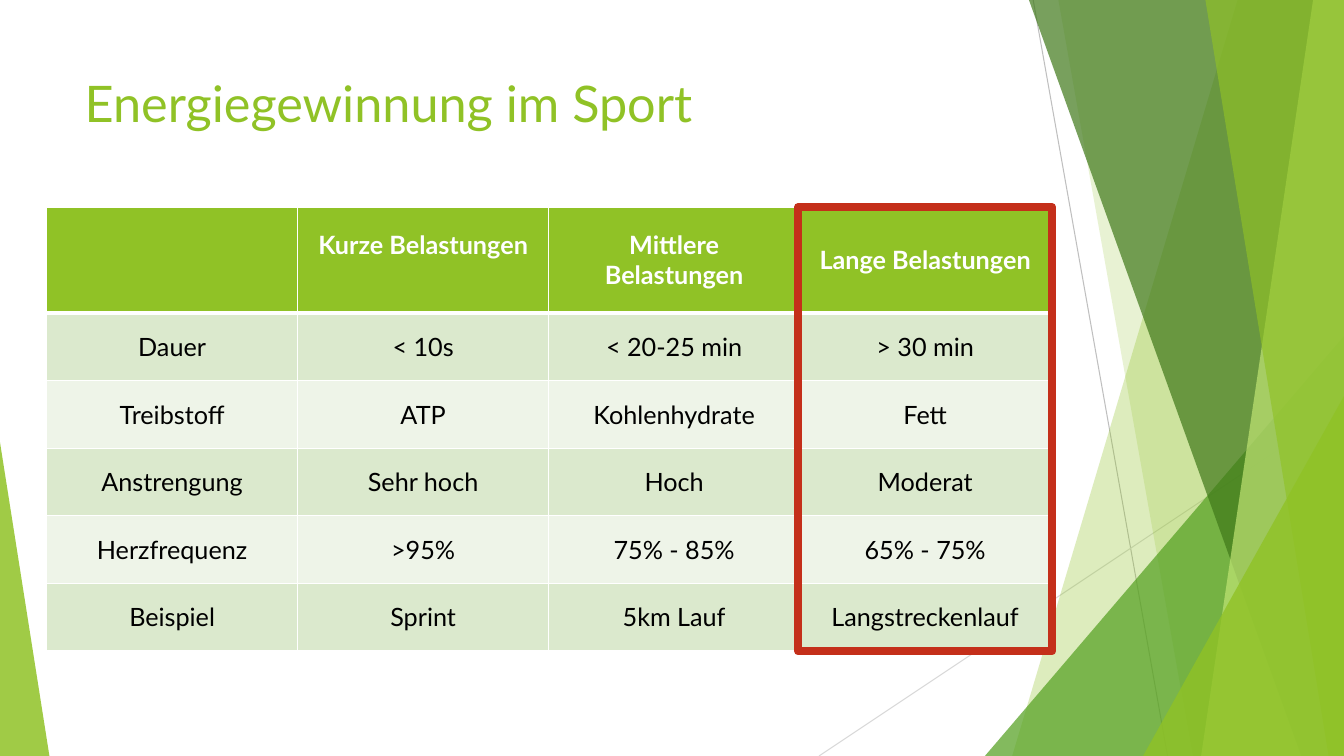
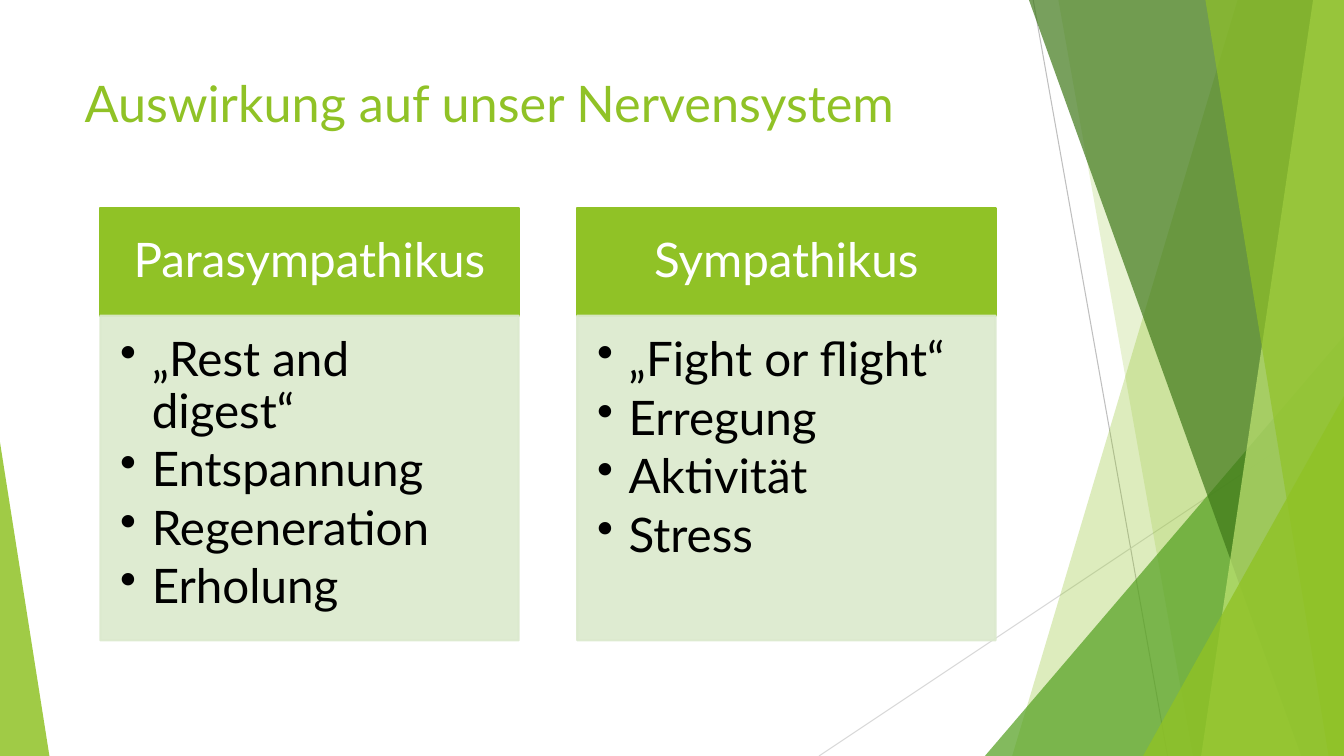
"""Build two slides on energy supply in sport and the nervous system."""
import lxml.etree
import pptx
import pptx.dml.color
import pptx.enum.shapes
import pptx.enum.text
import pptx.oxml.ns
import pptx.util

Pt = pptx.util.Pt
qn = pptx.oxml.ns.qn
SHAPE = pptx.enum.shapes.MSO_SHAPE
ALIGN = pptx.enum.text.PP_ALIGN
ANCHOR = pptx.enum.text.MSO_ANCHOR

FONT = "Lato"
WIDTH, HEIGHT = 960, 540
COLOURS = {
    name: pptx.dml.color.RGBColor.from_string(value)
    for name, value in {
        "lime": "90C226", "green": "54A021", "forest": "3F7819", "pale": "C0E474",
        "mint": "DBE9CD", "mist": "EEF4E8", "red": "C42F1A", "black": "000000",
        "white": "FFFFFF", "grey": "BFBFBF", "silver": "D9D9D9",
    }.items()
}


def paint(shape, colour, opacity=100, line_width=0):
    shape.shadow.inherit = False
    shape.fill.solid()
    shape.fill.fore_color.rgb = COLOURS[colour]
    if line_width:
        shape.line.color.rgb = COLOURS[colour]
        shape.line.width = Pt(line_width)
    else:
        shape.line.fill.background()
    if opacity < 100:
        for tint in shape.element.spPr.iter(qn("a:srgbClr")):
            lxml.etree.SubElement(tint, qn("a:alpha"), val=str(opacity * 1000))


def style_text(para, size, colour, align=ALIGN.CENTER, bold=False):
    para.alignment = align
    for span in para.runs:
        span.font.name = FONT
        span.font.size = Pt(size)
        span.font.bold = bold
        span.font.color.rgb = COLOURS[colour]


deck = pptx.Presentation()
deck.slide_width, deck.slide_height = Pt(WIDTH), Pt(HEIGHT)
layout = deck.slide_layouts[5]

pages = []
for heading in ["Energiegewinnung im Sport", "Auswirkung auf unser Nervensystem"]:
    page = deck.slides.add_slide(layout)
    title = page.shapes.title
    title.left, title.top, title.width, title.height = Pt(53.3), Pt(48), Pt(677), Pt(104)
    title.text_frame.text = heading
    title.text_frame.vertical_anchor = ANCHOR.TOP
    style_text(title.text_frame.paragraphs[0], 36, "lime", ALIGN.LEFT)
    pages.append(page)
table_page, nerve_page = pages

decorations = []
for colour, start_x, start_y, end_x in [("grey", 738, 0, 834), ("silver", WIDTH, 290, 585)]:
    line = table_page.shapes.add_connector(
        pptx.enum.shapes.MSO_CONNECTOR.STRAIGHT, Pt(start_x), Pt(start_y), Pt(end_x), Pt(HEIGHT))
    line.line.color.rgb = COLOURS[colour]
    line.line.width = Pt(0.75)
    lxml.etree.SubElement(line.element.spPr, qn("a:effectLst"))
    decorations.append(line)

for kind, colour, opacity, *place in [
    ("band", "lime", 30, 884, 723),
    ("band", "lime", 20, 756, 852),
    ("triangle", "green", 72, 703.5, 240, WIDTH, 1),
    ("band", "forest", 70, 735, 929.5),
    ("band", "pale", 70, 938, 858),
    ("band", "lime", 65, 861, 949),
    ("triangle", "lime", 80, 816.5, 283, WIDTH, 1),
    ("triangle", "lime", 85, 0, 316, 35.3, 0),
]:
    if kind == "band":
        top_x, bottom_x = place
        outline = table_page.shapes.build_freeform(Pt(top_x), 0)
        outline.add_line_segments(
            [(Pt(WIDTH), 0), (Pt(WIDTH), Pt(HEIGHT)), (Pt(bottom_x), Pt(HEIGHT))], close=True)
        shape = outline.convert_to_shape()
    else:
        left, top, right, apex = place
        shape = table_page.shapes.add_shape(
            SHAPE.ISOSCELES_TRIANGLE, Pt(left), Pt(top), Pt(right - left), Pt(HEIGHT - top))
        shape.adjustments[0] = apex
    paint(shape, colour, opacity)
    decorations.append(shape)

for decoration in decorations:
    layout.shapes.element.append(decoration.element)

rows = [
    ["", "Kurze Belastungen", "Mittlere Belastungen", "Lange Belastungen"],
    ["Dauer", "< 10s", "< 20-25 min", "> 30 min"],
    ["Treibstoff", "ATP", "Kohlenhydrate", "Fett"],
    ["Anstrengung", "Sehr hoch", "Hoch", "Moderat"],
    ["Herzfrequenz", ">95%", "75% - 85%", "65% - 75%"],
    ["Beispiel", "Sprint", "5km Lauf", "Langstreckenlauf"],
]
table_left, table_top, column_width = 33.3, 148, 179.3
header_height, row_height = 75.6, 48.3
table_height = header_height + row_height * (len(rows) - 1)
table = table_page.shapes.add_table(
    len(rows), len(rows[0]), Pt(table_left), Pt(table_top),
    Pt(column_width * len(rows[0])), Pt(table_height)).table
for column in table.columns:
    column.width = Pt(column_width)
for row_index, texts in enumerate(rows):
    is_header = row_index == 0
    table.rows[row_index].height = Pt(header_height if is_header else row_height)
    fill = "lime" if is_header else ("mist", "mint")[row_index % 2]
    for column_index, text in enumerate(texts):
        cell = table.cell(row_index, column_index)
        cell.text_frame.text = text
        cell.vertical_anchor = ANCHOR.MIDDLE
        style_text(cell.text_frame.paragraphs[0], 18, "white" if is_header else "black", bold=is_header)
        cell.fill.solid()
        cell.fill.fore_color.rgb = COLOURS[fill]
        properties = cell.text_frame._txBody.getparent().get_or_add_tcPr()
        for position, side in enumerate(["lnL", "lnR", "lnT", "lnB"]):
            thick = (is_header and side == "lnB") or (row_index == 1 and side == "lnT")
            border = lxml.etree.Element(qn("a:" + side), w=str(Pt(3 if thick else 1)))
            paint_node = lxml.etree.SubElement(border, qn("a:solidFill"))
            lxml.etree.SubElement(paint_node, qn("a:srgbClr"), val=str(COLOURS["white"]))
            properties.insert(position, border)
table.cell(0, 1).margin_bottom = Pt(25.2)

highlight = table_page.shapes.add_shape(
    SHAPE.RECTANGLE, Pt(table_left + 3 * column_width - 1), Pt(table_top),
    Pt(column_width + 2), Pt(table_height))
highlight.shadow.inherit = False
highlight.fill.background()
highlight.line.color.rgb = COLOURS["red"]
highlight.line.width = Pt(6)
lxml.etree.SubElement(highlight.element.spPr.find(qn("a:ln")), qn("a:round"))

panel_left, panel_top, panel_width, panel_step = 71.7, 148.5, 298.8, 340.6
heading_height, body_height = 77, 232
panels = [
    ("Parasympathikus", ["„Rest and digest“", "Entspannung", "Regeneration", "Erholung"]),
    ("Sympathikus", ["„Fight or flight“", "Erregung", "Aktivität", "Stress"]),
]
for panel_index, (heading, effects) in enumerate(panels):
    left = panel_left + panel_index * panel_step
    heading_box = nerve_page.shapes.add_shape(
        SHAPE.RECTANGLE, Pt(left), Pt(panel_top), Pt(panel_width), Pt(heading_height))
    paint(heading_box, "lime", line_width=1.5)
    frame = heading_box.text_frame
    frame.text = heading
    frame.vertical_anchor = ANCHOR.MIDDLE
    frame.margin_left = frame.margin_right = Pt(18.7)
    frame.margin_top = frame.margin_bottom = Pt(10.8)
    frame.paragraphs[0].line_spacing = 0.9
    style_text(frame.paragraphs[0], 34, "white")

    body_box = nerve_page.shapes.add_shape(
        SHAPE.RECTANGLE, Pt(left), Pt(panel_top + heading_height), Pt(panel_width), Pt(body_height))
    paint(body_box, "mint", 90, 1.5)
    frame = body_box.text_frame
    frame.text = "\n".join(effects)
    frame.vertical_anchor = ANCHOR.TOP
    frame.margin_left = frame.margin_top = Pt(14.2)
    frame.margin_right, frame.margin_bottom = Pt(18.7), Pt(21.3)
    for para in frame.paragraphs:
        properties = para._p.get_or_add_pPr()
        properties.set("marL", str(Pt(22.5)))
        properties.set("indent", str(-Pt(22.5)))
        lxml.etree.SubElement(properties, qn("a:buChar"), char="•")
        para.line_spacing = 0.9
        para.space_after = Pt(5.1)
        style_text(para, 34, "black", ALIGN.LEFT)

deck.save("out.pptx")
